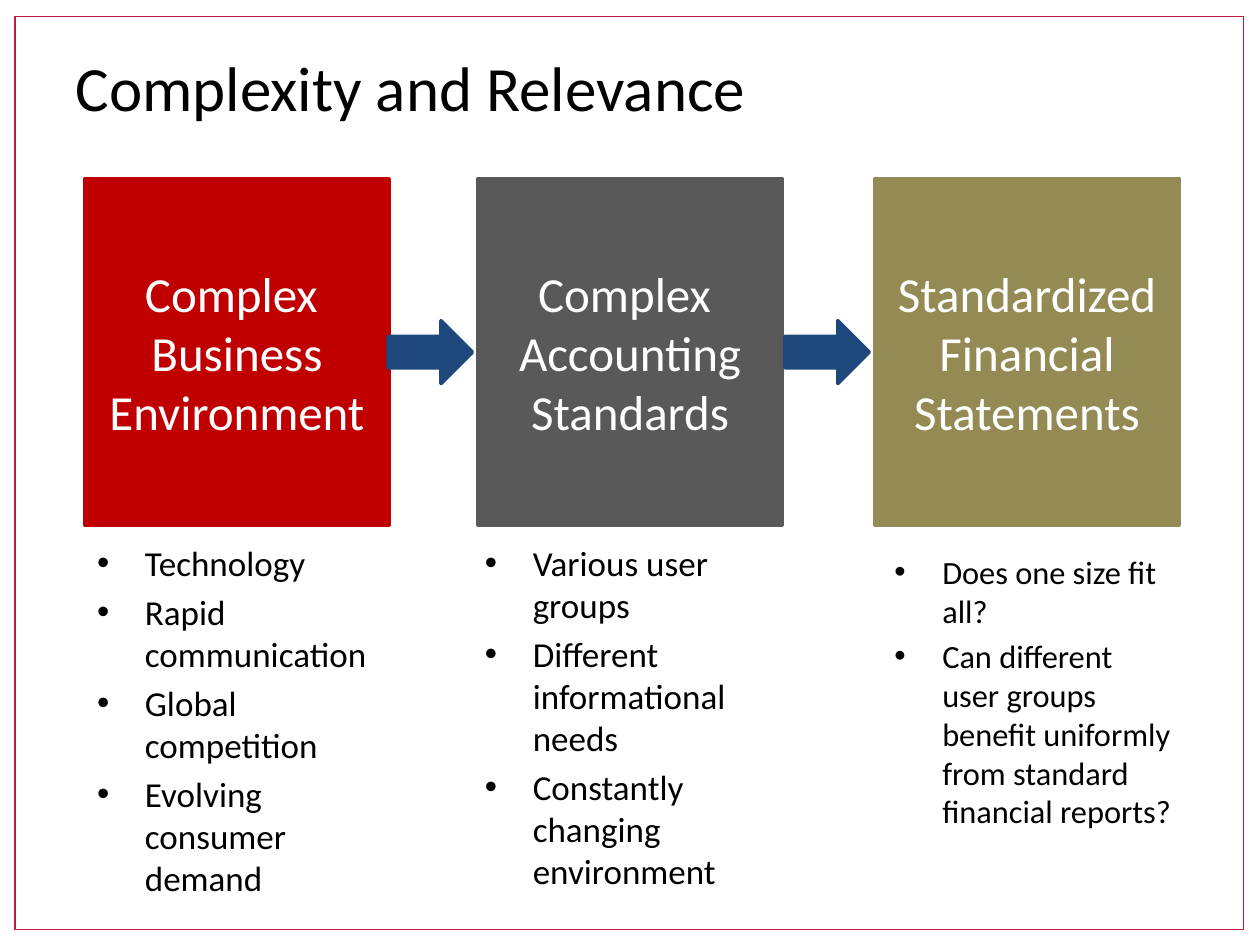
from lxml import etree
from pptx import Presentation
from pptx.dml.color import RGBColor
from pptx.enum.shapes import MSO_SHAPE
from pptx.enum.text import MSO_ANCHOR, MSO_AUTO_SIZE, PP_ALIGN
from pptx.oxml.ns import qn
from pptx.util import Inches, Pt

RECTANGLE, RIGHT_ARROW = MSO_SHAPE.RECTANGLE, MSO_SHAPE.RIGHT_ARROW
LEFT, CENTER = PP_ALIGN.LEFT, PP_ALIGN.CENTER
TOP, MIDDLE = MSO_ANCHOR.TOP, MSO_ANCHOR.MIDDLE
NO_AUTOFIT = MSO_AUTO_SIZE.NONE

BLACK = RGBColor(0x00, 0x00, 0x00)
WHITE = RGBColor(0xFF, 0xFF, 0xFF)
CRIMSON = RGBColor(0xBC, 0x1E, 0x3E)
RED = RGBColor(0xC0, 0x00, 0x00)
GRAY = RGBColor(0x59, 0x59, 0x59)
OLIVE = RGBColor(0x94, 0x8A, 0x54)
NAVY = RGBColor(0x1F, 0x49, 0x7D)

FONT = "Calibri"
TITLE = "Complexity and Relevance"
STAGES = [
    {"heading": ["Complex ", "Business", "Environment"], "color": RED, "left": 0.67,
     "points": ["Technology", "Rapid communication", "Global competition",
                "Evolving consumer demand"],
     "points_at": (0.67, 4.25), "size": 20},
    {"heading": ["Complex ", "Accounting Standards"], "color": GRAY, "left": 3.79,
     "points": ["Various user groups", "Different informational needs",
                "Constantly changing environment"],
     "points_at": (3.75, 4.25), "size": 20},
    {"heading": ["Standardized Financial Statements"], "color": OLIVE, "left": 6.94,
     "points": ["Does one size fit all?",
                "Can different user groups benefit uniformly from standard "
                "financial reports?"],
     "points_at": (7, 4.33), "size": 18.5},
]
BOX_TOP, BOX_WIDTH, BOX_HEIGHT = 1.42, 2.42, 2.75
POINTS_HEIGHT = 2.83
ARROW_WIDTH, ARROW_HEIGHT, ARROW_GAP = 0.67, 0.5, 0.04
BULLET_INDENT = 0.38


def place(shape, left, top, width, height):
    shape.left, shape.top = Inches(left), Inches(top)
    shape.width, shape.height = Inches(width), Inches(height)


def add_bullet(paragraph):
    properties = paragraph._p.get_or_add_pPr()
    indent = Inches(BULLET_INDENT)
    properties.set("marL", str(indent))
    properties.set("indent", str(-indent))
    etree.SubElement(properties, qn("a:buFont"), typeface="Arial")
    etree.SubElement(properties, qn("a:buChar"), char="•")


def write_text(shape, lines, size, color=BLACK, align=LEFT, anchor=TOP, bullets=False):
    frame = shape.text_frame
    frame.word_wrap = True
    frame.auto_size = NO_AUTOFIT
    frame.vertical_anchor = anchor
    for index, line in enumerate(lines):
        paragraph = frame.add_paragraph() if index else frame.paragraphs[0]
        if bullets:
            add_bullet(paragraph)
        paragraph.alignment = align
        paragraph.space_before = Pt(size * 0.2 if bullets and index else 0)
        run = paragraph.add_run()
        run.text = line
        run.font.name = FONT
        run.font.size = Pt(size)
        run.font.color.rgb = color


def add_block(slide, preset, left, top, width, height, line, fill=None, weight=2):
    shape = slide.shapes.add_shape(
        preset, Inches(left), Inches(top), Inches(width), Inches(height))
    shape.shadow.inherit = False
    if fill is None:
        shape.fill.background()
    else:
        shape.fill.solid()
        shape.fill.fore_color.rgb = fill
    shape.line.color.rgb = line
    shape.line.width = Pt(weight)
    return shape


def main():
    presentation = Presentation()
    presentation.slide_width, presentation.slide_height = Inches(10), Inches(7.5)
    slide = presentation.slides.add_slide(presentation.slide_layouts[1])
    title, body = slide.shapes.title, slide.placeholders[1]

    add_block(slide, RECTANGLE, 0.12, 0.13, 9.75, 7.25, CRIMSON, weight=0.75)
    place(title, 0.5, 0.3, 6.92, 0.77)
    write_text(title, [TITLE], 36, anchor=MIDDLE)

    for index, stage in enumerate(STAGES):
        box = add_block(slide, RECTANGLE, stage["left"], BOX_TOP, BOX_WIDTH, BOX_HEIGHT,
                        stage["color"], stage["color"])
        write_text(box, stage["heading"], 28, WHITE, CENTER, MIDDLE)

        points = slide.shapes.add_textbox(0, 0, 0, 0) if index else body
        place(points, *stage["points_at"], BOX_WIDTH, POINTS_HEIGHT)
        write_text(points, stage["points"], stage["size"], bullets=True)

    arrow_top = BOX_TOP + (BOX_HEIGHT - ARROW_HEIGHT) / 2
    for stage in STAGES[1:]:
        add_block(slide, RIGHT_ARROW, stage["left"] - ARROW_GAP - ARROW_WIDTH, arrow_top,
                  ARROW_WIDTH, ARROW_HEIGHT, NAVY, NAVY)

    presentation.save("out.pptx")


if __name__ == "__main__":
    main()
